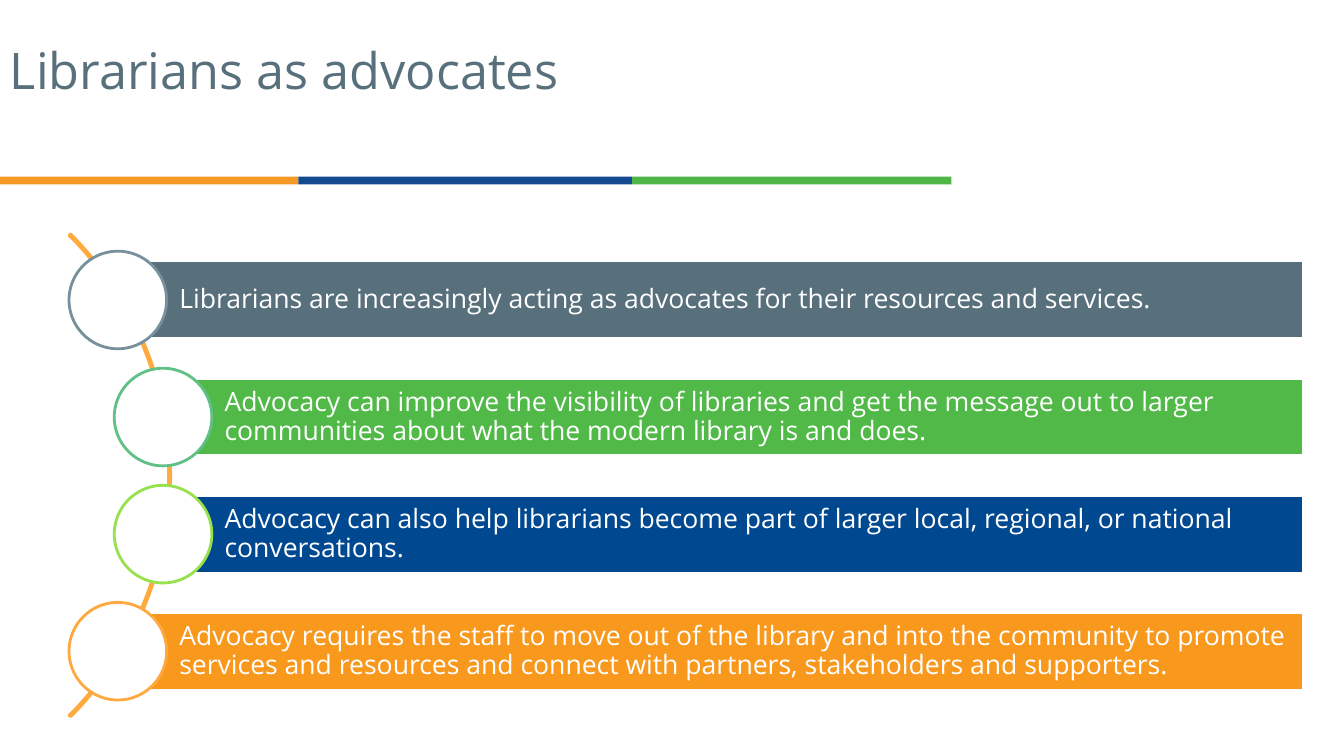
from dataclasses import dataclass
from typing import Optional

from pptx import Presentation
from pptx.dml.color import RGBColor
from pptx.enum.shapes import MSO_SHAPE
from pptx.enum.text import MSO_ANCHOR, MSO_AUTO_SIZE, PP_ALIGN
from pptx.shapes.autoshape import Shape
from pptx.slide import Slide
from pptx.text.text import TextFrame
from pptx.util import Cm, Pt


@dataclass(frozen=True)
class Theme:
    font: str = "Open Sans"
    title_size: float = 36
    body_size: float = 19
    line_width: float = 2
    line_spacing: float = 0.9
    white: str = "FFFFFF"
    slate: str = "586F7C"
    slate_ring: str = "78909C"
    green: str = "51B948"
    green_ring: str = "61C085"
    lime_ring: str = "98E14E"
    blue: str = "004890"
    orange: str = "F8981D"
    orange_ring: str = "FEA93F"
    arc: str = "FFAA3F"
    stripe_orange: str = "F49925"
    stripe_blue: str = "154A90"
    stripe_green: str = "4EB748"


THEME = Theme()


@dataclass(frozen=True)
class Stripe:
    width: float
    color: str


@dataclass(frozen=True)
class Point:
    text: str
    left: float
    fill: str
    ring: str


OUTER_LEFT, INNER_LEFT = 2.97, 4.11
BAR_RIGHT, BAR_TOP, BAR_HEIGHT, BAR_PITCH = 32.84, 6.58, 1.96, 2.95
RING_SIZE = 2.46
ARC_LEFT, ARC_TOP, ARC_SIZE = -12.9, 3.38, 17.2
STRIPE_TOP, STRIPE_HEIGHT = 4.45, 0.2

STRIPES = [
    Stripe(7.52, THEME.stripe_orange),
    Stripe(8.41, THEME.stripe_blue),
    Stripe(8.05, THEME.stripe_green),
]

POINTS = [
    Point("Librarians are increasingly acting as advocates for their resources "
          "and services.", OUTER_LEFT, THEME.slate, THEME.slate_ring),
    Point("Advocacy can improve the visibility of libraries and get the message "
          "out to larger communities about what the modern library is and does.",
          INNER_LEFT, THEME.green, THEME.green_ring),
    Point("Advocacy can also help librarians become part of larger local, "
          "regional, or national conversations.",
          INNER_LEFT, THEME.blue, THEME.lime_ring),
    Point("Advocacy requires the staff to move out of the library and into the "
          "community to promote services and resources and connect with partners, "
          "stakeholders and supporters.",
          OUTER_LEFT, THEME.orange, THEME.orange_ring),
]


def write_text(frame: TextFrame, text: str, *, size: float, color: str,
               anchor: MSO_ANCHOR, left_inset: float, right_inset: float) -> None:
    frame.word_wrap = True
    frame.auto_size = MSO_AUTO_SIZE.NONE
    frame.vertical_anchor = anchor
    frame.margin_left, frame.margin_right = Cm(left_inset), Cm(right_inset)
    frame.margin_top = frame.margin_bottom = Cm(0.13)
    paragraph = frame.paragraphs[0]
    paragraph.alignment = PP_ALIGN.LEFT
    paragraph.line_spacing = THEME.line_spacing
    run = paragraph.add_run()
    run.text = text
    run.font.name = THEME.font
    run.font.size = Pt(size)
    run.font.color.rgb = RGBColor.from_string(color)


def add_shape(slide: Slide, kind: MSO_SHAPE, left: float, top: float,
              width: float, height: float, *, fill: Optional[str] = None,
              line: Optional[str] = None) -> Shape:
    shape = slide.shapes.add_shape(kind, Cm(left), Cm(top), Cm(width), Cm(height))
    shape.shadow.inherit = False
    if fill:
        shape.fill.solid()
        shape.fill.fore_color.rgb = RGBColor.from_string(fill)
    else:
        shape.fill.background()
    if line:
        shape.line.color.rgb = RGBColor.from_string(line)
        shape.line.width = Pt(THEME.line_width)
    else:
        shape.line.fill.background()
    return shape


def add_title(slide: Slide, text: str) -> None:
    title = slide.shapes.title
    title.left, title.top = Cm(0), Cm(1.04)
    title.width, title.height = Cm(21.41), Cm(3)
    write_text(title.text_frame, text, size=THEME.title_size, color=THEME.slate,
               anchor=MSO_ANCHOR.TOP, left_inset=0.25, right_inset=0.25)


def add_stripes(slide: Slide) -> None:
    left = 0.0
    for stripe in STRIPES:
        add_shape(slide, MSO_SHAPE.RECTANGLE, left, STRIPE_TOP, stripe.width,
                  STRIPE_HEIGHT, fill=stripe.color)
        left += stripe.width


def add_arc(slide: Slide) -> None:
    arc = add_shape(slide, MSO_SHAPE.BLOCK_ARC, ARC_LEFT, ARC_TOP, ARC_SIZE,
                    ARC_SIZE, line=THEME.arc)
    for index, value in enumerate((189, 27, 0.003)):
        arc.adjustments[index] = value


def add_point(slide: Slide, point: Point, top: float) -> None:
    """Draw a bar with its ring centred on the bar's left edge."""
    bar = add_shape(slide, MSO_SHAPE.RECTANGLE, point.left, top,
                    BAR_RIGHT - point.left, BAR_HEIGHT,
                    fill=point.fill, line=THEME.white)
    write_text(bar.text_frame, point.text, size=THEME.body_size, color=THEME.white,
               anchor=MSO_ANCHOR.MIDDLE, left_inset=1.55, right_inset=0.13)
    add_shape(slide, MSO_SHAPE.OVAL, point.left - RING_SIZE / 2,
              top + (BAR_HEIGHT - RING_SIZE) / 2, RING_SIZE, RING_SIZE,
              fill=THEME.white, line=point.ring)


def main() -> None:
    presentation = Presentation()
    presentation.slide_width, presentation.slide_height = Cm(33.87), Cm(19.05)
    slide = presentation.slides.add_slide(
        presentation.slide_layouts.get_by_name("Title Only"))
    add_stripes(slide)
    add_title(slide, "Librarians as advocates")
    add_arc(slide)
    for index, point in enumerate(POINTS):
        add_point(slide, point, BAR_TOP + index * BAR_PITCH)
    presentation.save("out.pptx")


if __name__ == "__main__":
    main()
